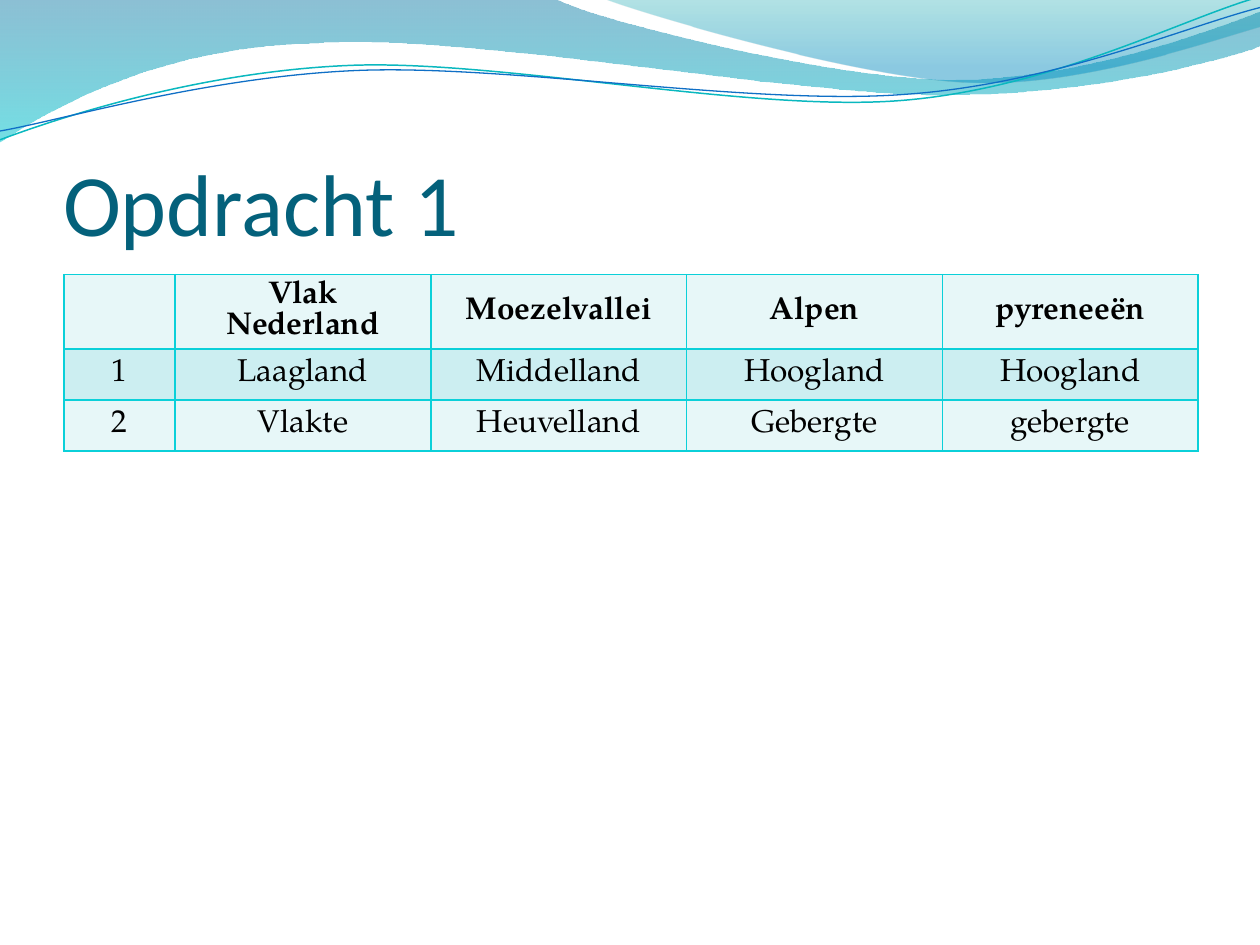
from dataclasses import dataclass

from lxml import etree
from pptx import Presentation
from pptx import util as u
from pptx.dml.color import RGBColor
from pptx.enum import text
from pptx.oxml import parse_xml
from pptx.oxml.ns import nsdecls, qn


@dataclass(frozen=True)
class Theme:
    title_font: str = "Calibri"
    body_font: str = "TeX Gyre Pagella"
    title_size: int = 50
    body_size: int = 18
    title_color: str = "04617B"
    body_color: str = "000000"
    border: str = "0BD0D9"
    bands: tuple = ("E7F7F8", "CCEEF1")
    teal_line: str = "0AB8BF"
    blue_line: str = "0F6FC6"
    # Gradient stops: position, colour, opacity in percent
    wide_wave: tuple = ((0, "0074A1", 45), (100, "00C6CF", 55))
    corner_wave: tuple = ((0, "00A1A9", 30), (80, "008BBF", 45))


THEME = Theme()

# A pair is a straight step; six numbers are two Bézier handles and an end point.
WIDE_WAVE = [(0, 0), (4.4, -0.01), (4.76, 0.17, 6.64, 0.63, 7.58, 0.63),
             (8.53, 0.63, 9.58, 0.26, 10, 0.09), (10.01, 0.36),
             (9.83, 0.44, 8.7, 0.76, 7.46, 0.75),
             (6.22, 0.75, 3.82, 0.28, 2.57, 0.34),
             (1.29, 0.36, 0.46, 0.83, -0.01, 1.13)]
CORNER_WAVE = [(4.79, -0.01), (5.09, 0.11, 6.82, 0.62, 7.69, 0.65),
               (8.56, 0.69, 9.61, 0.32, 10, 0.21), (10, 0)]
TEAL_CURVE = [(0, 1.11), (0.48, 0.93, 1.58, 0.57, 2.77, 0.52),
              (3.95, 0.47, 5.93, 0.89, 7.13, 0.8),
              (8.33, 0.71, 9.38, 0.15, 9.98, -0.02)]
BLUE_CURVE = [(0, 1.04), (0.47, 0.96, 1.64, 0.61, 2.83, 0.56),
              (4.03, 0.51, 5.97, 0.84, 7.17, 0.75),
              (8.36, 0.67, 9.41, 0.21, 10, 0.06)]

ROWS = [["", "Vlak Nederland", "Moezelvallei", "Alpen", "pyreneeën"],
        ["1", "Laagland", "Middelland", "Hoogland", "Hoogland"],
        ["2", "Vlakte", "Heuvelland", "Gebergte", "gebergte"]]


def bend_segments(shape, steps):
    """Give the straight segments their Bézier handles."""
    segments = list(shape._element.spPr.iter(qn("a:lnTo")))
    for segment, step in zip(segments, steps[1:]):
        if len(step) == 2:
            continue
        segment.tag = qn("a:cubicBezTo")
        for index in (0, 1):
            x, y = map(u.Inches, step[2 * index:2 * index + 2])
            handle = etree.Element(qn("a:pt"), x=str(x - shape.left), y=str(y - shape.top))
            segment.insert(index, handle)


def add_outline(slide, steps, close):
    points = [tuple(map(u.Inches, step[-2:])) for step in steps]
    builder = slide.shapes.build_freeform(*points[0])
    builder.add_line_segments(points[1:], close=close)
    shape = builder.convert_to_shape()
    bend_segments(shape, steps)
    shape.shadow.inherit = False
    return shape


def add_wave(slide, steps, stops):
    shape = add_outline(slide, steps, close=True)
    shape.line.fill.background()
    shape.fill.gradient()
    shape.fill.gradient_angle = 270
    for stop, (position, color, _) in zip(shape.fill.gradient_stops, stops):
        stop.position = position / 100
        stop.color.rgb = RGBColor.from_string(color)
    colors = list(shape._element.spPr.iter(qn("a:srgbClr")))
    for element, (_, _, opacity) in zip(colors, stops):
        etree.SubElement(element, qn("a:alpha"), val=str(opacity * 1000))


def add_curve(slide, steps, color, width):
    shape = add_outline(slide, steps, close=False)
    shape.fill.background()
    shape.line.color.rgb = RGBColor.from_string(color)
    shape.line.width = u.Pt(width)


def add_header_waves(slide):
    add_wave(slide, WIDE_WAVE, THEME.wide_wave)
    add_wave(slide, CORNER_WAVE, THEME.corner_wave)
    add_curve(slide, TEAL_CURVE, THEME.teal_line, 0.85)
    add_curve(slide, BLUE_CURVE, THEME.blue_line, 0.75)


def style_font(font, name, size, color, bold=False):
    font.name, font.size, font.bold = name, u.Pt(size), bold
    font.color.rgb = RGBColor.from_string(color)


def fill_title(slide, box, wording):
    title = slide.shapes.title
    title.left, title.top, title.width, title.height = map(u.Inches, box)
    frame = title.text_frame
    frame.text = wording
    frame.auto_size = text.MSO_AUTO_SIZE.NONE
    frame.vertical_anchor = text.MSO_ANCHOR.BOTTOM
    frame.margin_left = frame.margin_right = frame.margin_bottom = 0
    frame.margin_top = u.Inches(0.05)
    paragraph = frame.paragraphs[0]
    paragraph.alignment = text.PP_ALIGN.LEFT
    style_font(paragraph.runs[0].font, THEME.title_font, THEME.title_size,
               THEME.title_color)


def set_borders(cell):
    properties = cell._tc.get_or_add_tcPr()
    for index, side in enumerate(("lnL", "lnR", "lnT", "lnB")):
        properties.insert(index, parse_xml(
            f'<a:{side} {nsdecls("a")} w="12700"><a:solidFill>'
            f'<a:srgbClr val="{THEME.border}"/></a:solidFill></a:{side}>'))


def fill_cell(cell, wording, band, bold):
    cell.fill.solid()
    cell.fill.fore_color.rgb = RGBColor.from_string(band)
    cell.vertical_anchor = text.MSO_ANCHOR.MIDDLE
    set_borders(cell)
    cell.text = wording
    paragraph = cell.text_frame.paragraphs[0]
    paragraph.alignment = text.PP_ALIGN.CENTER
    for run in paragraph.runs:
        style_font(run.font, THEME.body_font, THEME.body_size, THEME.body_color, bold)


def add_landscape_table(slide, box, label_width, header_height):
    left, top, width, height = map(u.Inches, box)
    row_count, column_count = len(ROWS), len(ROWS[0])
    table = slide.shapes.add_table(row_count, column_count, left, top, width, height).table
    label_width, header_height = u.Inches(label_width), u.Inches(header_height)
    for index, column in enumerate(table.columns):
        column.width = (width - label_width) // (column_count - 1) if index else label_width
    for index, row in enumerate(table.rows):
        row.height = (height - header_height) // (row_count - 1) if index else header_height
        for cell, wording in zip(row.cells, ROWS[index]):
            fill_cell(cell, wording, THEME.bands[index % 2], bold=index == 0)


def main():
    presentation = Presentation()
    presentation.slide_width, presentation.slide_height = u.Inches(10), u.Inches(7.5)
    slide = presentation.slides.add_slide(presentation.slide_layouts[5])
    add_header_waves(slide)
    fill_title(slide, (0.5, 0.77, 9, 1.25), "Opdracht 1")
    add_landscape_table(slide, (0.51, 2.18, 9, 1.4), label_width=0.88, header_height=0.59)
    presentation.save("out.pptx")


if __name__ == "__main__":
    main()
